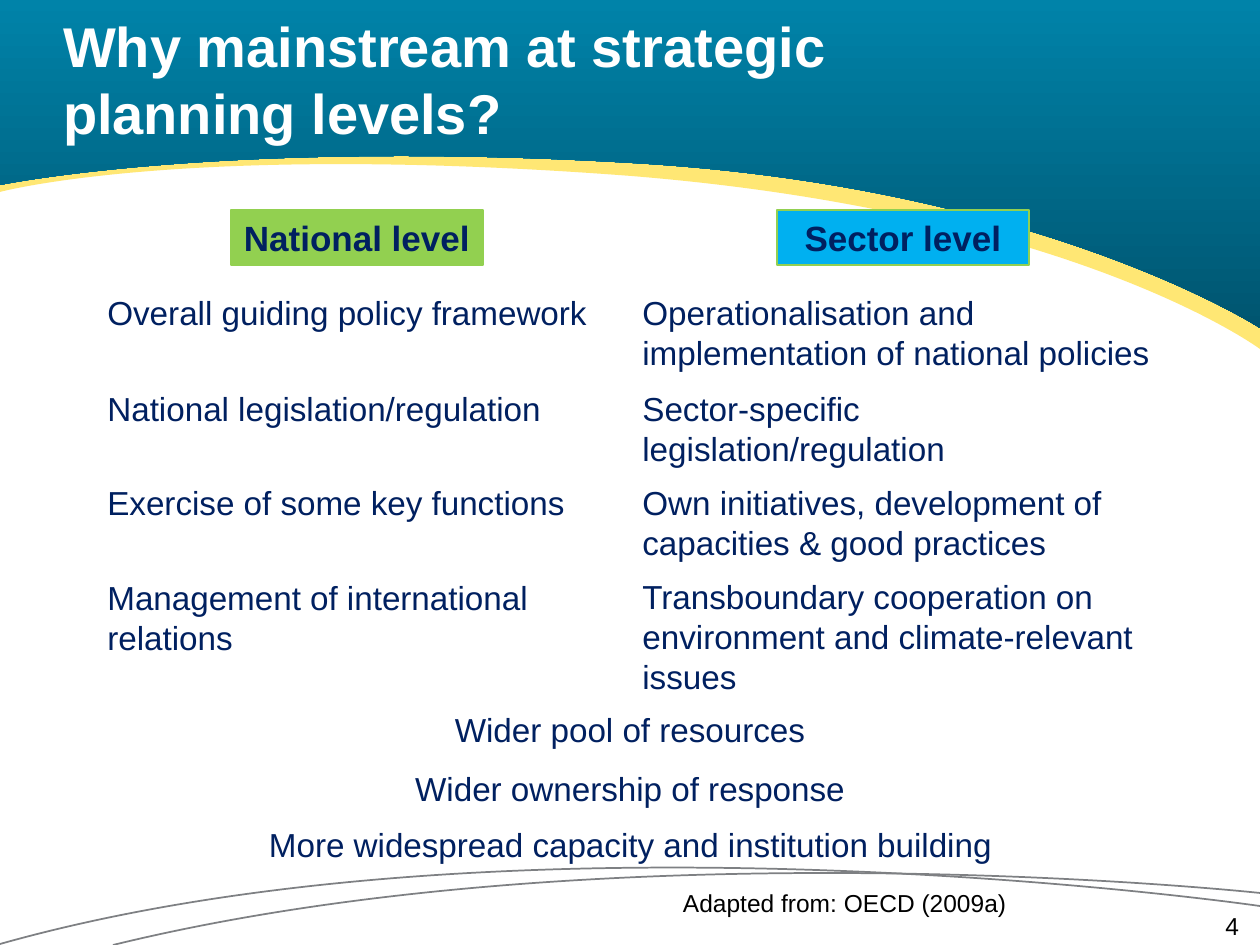
from dataclasses import dataclass

from pptx import Presentation
from pptx.dml.color import RGBColor
from pptx.enum.shapes import MSO_SHAPE as Shape
from pptx.enum.text import MSO_ANCHOR as Anchor, MSO_AUTO_SIZE as AutoSize, PP_ALIGN as Align
from pptx.oxml.ns import qn
from pptx.util import Pt

PX = 914400 / 126
WIDTH, HEIGHT = 1260, 945
TITLE_ONLY_LAYOUT = 5

Point = tuple[int, int]


@dataclass(frozen=True)
class Theme:
    font: str = "Arial"
    navy: str = "002060"
    white: str = "FFFFFF"
    black: str = "000000"
    green: str = "92D050"
    blue: str = "00B0F0"
    yellow: str = "FFE774"
    teal: str = "0083A9"
    deep_teal: str = "005570"
    grey: str = "7E8083"
    title_size: int = 32
    header_size: int = 20
    body_size: int = 19
    small_size: int = 14


THEME = Theme()


@dataclass(frozen=True)
class Box:
    left: int
    top: int
    width: int
    height: int

    def emu(self) -> tuple[int, int, int, int]:
        return px(self.left), px(self.top), px(self.width), px(self.height)


@dataclass(frozen=True)
class Label:
    text: str
    box: Box
    size: int = THEME.body_size
    color: str = THEME.navy
    align: Align = Align.LEFT
    inset: bool = True


@dataclass(frozen=True)
class Header:
    text: str
    box: Box
    fill: str


def px(value: int) -> int:
    return round(value * PX)


def rgb(color: str) -> RGBColor:
    return RGBColor.from_string(color)


def apply(target, values: dict) -> None:
    for name, value in values.items():
        setattr(target, name, value)


def write(frame, text: str, size: int, color: str, align: Align, bold: bool = False) -> None:
    frame.text = text
    paragraph = frame.paragraphs[0]
    paragraph.alignment = align
    for run in paragraph.runs:
        apply(run.font, {"name": THEME.font, "size": Pt(size), "bold": bold})
        run.font.color.rgb = rgb(color)


def clear_insets(frame) -> None:
    sides = ("left", "top", "right", "bottom")
    apply(frame, {f"margin_{side}": 0 for side in sides})


def add_curve(shapes, curve: list[Point], corners: tuple[Point, ...] = ()):
    """Add a chain of cubic Bézier curves, closed through the corners if there are any."""
    start, *rest = [(px(x), px(y)) for x, y in (*curve, *corners)]
    builder = shapes.build_freeform(*start, scale=1.0)
    builder.add_line_segments(rest, close=bool(corners))
    shape = builder.convert_to_shape()
    shape.shadow.inherit = False
    segments = list(shape.element.iter(qn("a:lnTo")))[:len(curve) - 1]
    for first in range(0, len(segments), 3):
        control, *others = segments[first:first + 3]
        cubic = control.makeelement(qn("a:cubicBezTo"), {})
        control.addprevious(cubic)
        for segment in (control, *others):
            cubic.append(segment[0])
            segment.getparent().remove(segment)
    return shape


def add_footer_arc(shapes, points: list[Point]) -> None:
    arc = add_curve(shapes, points)
    arc.fill.background()
    arc.line.color.rgb = rgb(THEME.grey)
    arc.line.width = Pt(1)


def add_banner(slide, edge: list[Point]):
    """Add the area between the top of the slide and a curved lower edge."""
    banner = add_curve(slide.shapes, edge, ((0, -1), (WIDTH, -1)))
    banner.line.fill.background()
    return banner


def add_header(slide, header: Header) -> None:
    shape = slide.shapes.add_shape(Shape.RECTANGLE, *header.box.emu())
    shape.shadow.inherit = False
    shape.fill.solid()
    shape.fill.fore_color.rgb = rgb(header.fill)
    shape.line.color.rgb = rgb(THEME.green)
    shape.line.width = Pt(0.75)
    apply(shape.text_frame, {"word_wrap": True, "vertical_anchor": Anchor.TOP,
                             "auto_size": AutoSize.SHAPE_TO_FIT_TEXT})
    write(shape.text_frame, header.text, THEME.header_size, THEME.navy, Align.CENTER, bold=True)


def add_label(slide, label: Label) -> None:
    frame = slide.shapes.add_textbox(*label.box.emu()).text_frame
    auto_size = AutoSize.SHAPE_TO_FIT_TEXT if label.inset else AutoSize.NONE
    apply(frame, {"word_wrap": True, "auto_size": auto_size})
    if not label.inset:
        clear_insets(frame)
    write(frame, label.text, label.size, label.color, label.align)


def place_title(slide, text: str, box: Box) -> None:
    title = slide.shapes.title
    apply(title, dict(zip(("left", "top", "width", "height"), box.emu())))
    frame = title.text_frame
    apply(frame, {"word_wrap": True, "auto_size": AutoSize.NONE, "vertical_anchor": Anchor.MIDDLE})
    clear_insets(frame)
    write(frame, text, THEME.title_size, THEME.white, Align.LEFT, bold=True)
    title.element.getparent().append(title.element)  # in front of the banner


FOOTER_ARCS = [
    [(1260, 893), (1260, 893), (611, 823), (113, 945)],
    [(1260, 906), (1260, 906), (517, 798), (0, 944)],
]
YELLOW_EDGE = [(1260, 349), (1260, 349), (1076, 212), (631, 176), (185, 142), (0, 192), (0, 192)]
TEAL_EDGE = [(1260, 328), (1260, 328), (1041, 186), (631, 163), (221, 139), (0, 185), (0, 185)]

HEADERS = [
    Header("National level", Box(231, 210, 252, 55), THEME.green),
    Header("Sector level", Box(777, 210, 252, 55), THEME.blue),
]
NATIONAL_LEFT, SECTOR_LEFT = 95, 630
ONE_LINE, TWO_LINES, THREE_LINES = 53, 93, 133
COMPARISON = [
    Label("Overall guiding policy framework", Box(NATIONAL_LEFT, 286, 520, ONE_LINE)),
    Label("Operationalisation and implementation of national policies",
          Box(SECTOR_LEFT, 286, 546, TWO_LINES)),
    Label("National legislation/regulation", Box(NATIONAL_LEFT, 382, 546, ONE_LINE)),
    Label("Sector-specific legislation/regulation", Box(SECTOR_LEFT, 382, 546, TWO_LINES)),
    Label("Exercise of some key functions", Box(NATIONAL_LEFT, 476, 520, ONE_LINE)),
    Label("Own initiatives, development of capacities & good practices",
          Box(SECTOR_LEFT, 476, 546, TWO_LINES)),
    Label("Management of international relations", Box(NATIONAL_LEFT, 571, 546, TWO_LINES)),
    Label("Transboundary cooperation on environment and climate-relevant issues",
          Box(SECTOR_LEFT, 570, 609, THREE_LINES)),
]
SHARED = [
    Label("Wider pool of resources", Box(357, 703, 546, ONE_LINE), align=Align.CENTER),
    Label("Wider ownership of response", Box(357, 762, 546, ONE_LINE), align=Align.CENTER),
    Label("More widespread capacity and institution building", Box(242, 818, 777, ONE_LINE),
          align=Align.CENTER),
]
NOTES = [
    Label("4", Box(945, 911, 294, 23), THEME.small_size, THEME.black, Align.RIGHT, inset=False),
    Label("Adapted from: OECD (2009a)", Box(599, 882, 420, 43), THEME.small_size, THEME.black,
          Align.RIGHT),
]


def main() -> None:
    presentation = Presentation()
    apply(presentation, {"slide_width": px(WIDTH), "slide_height": px(HEIGHT)})
    slide = presentation.slides.add_slide(presentation.slide_layouts[TITLE_ONLY_LAYOUT])

    footer = slide.shapes.add_group_shape()
    for points in FOOTER_ARCS:
        add_footer_arc(footer.shapes, points)
    yellow_band = add_banner(slide, YELLOW_EDGE)
    yellow_band.fill.solid()
    yellow_band.fill.fore_color.rgb = rgb(THEME.yellow)
    teal_banner = add_banner(slide, TEAL_EDGE)
    teal_banner.fill.gradient()
    teal_banner.fill.gradient_angle = 270
    for stop, color, position in zip(teal_banner.fill.gradient_stops,
                                     (THEME.teal, THEME.deep_teal), (0, 1)):
        stop.color.rgb = rgb(color)
        stop.position = position

    place_title(slide, "Why mainstream at strategic \vplanning levels?", Box(63, 0, 1176, 158))
    for header in HEADERS:
        add_header(slide, header)
    for label in COMPARISON + SHARED + NOTES:
        add_label(slide, label)
    presentation.save("out.pptx")


if __name__ == "__main__":
    main()
